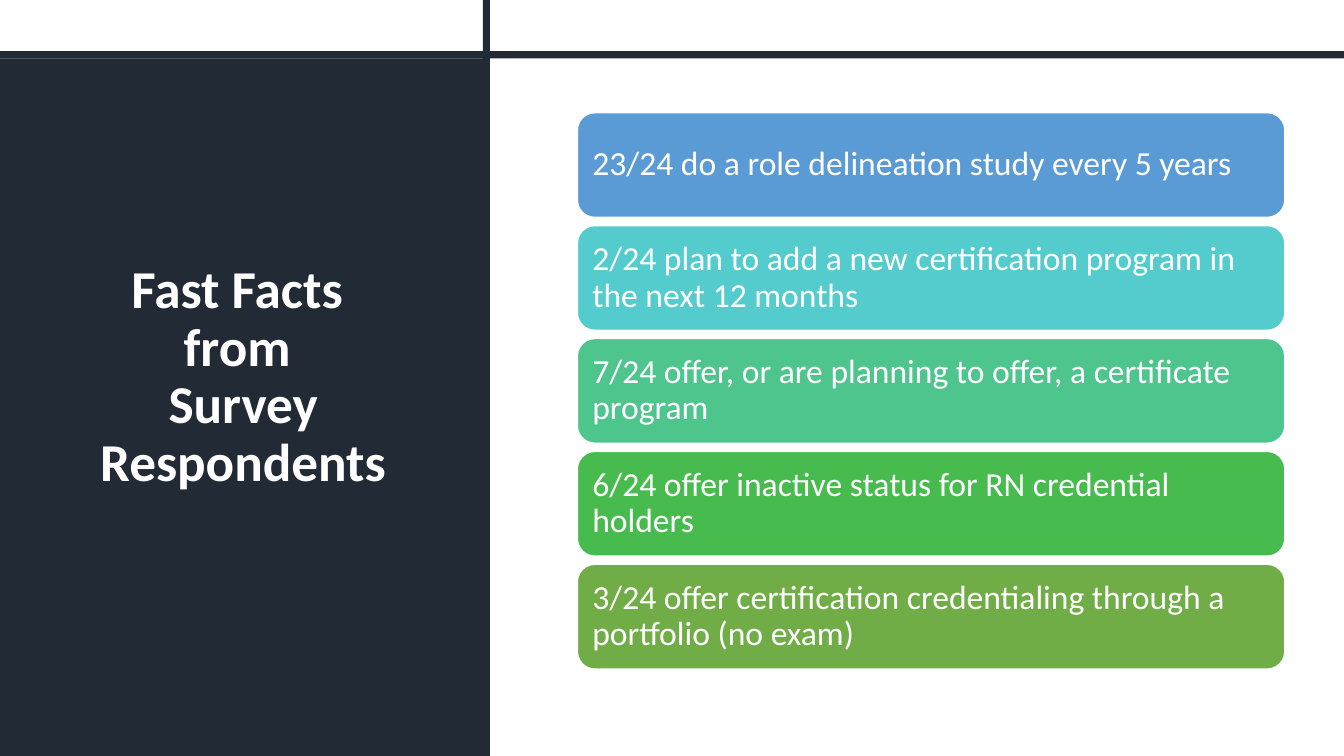
from dataclasses import dataclass
from typing import NamedTuple

from pptx import Presentation
from pptx.dml.color import RGBColor
from pptx.enum.shapes import MSO_SHAPE
from pptx.enum.text import MSO_ANCHOR, PP_ALIGN
from pptx.util import Cm, Pt


@dataclass(frozen=True)
class Theme:
    """Hold the colours and type sizes of the slide."""
    font: str = "Calibri"
    navy: str = "222A35"
    white: str = "FFFFFF"
    facts: tuple = ("5B9BD5", "54CCCD", "4DC58D", "48BB4F", "70AD47")
    title_size: int = 38
    fact_size: int = 24
    outline: int = 1


class Box(NamedTuple):
    """Describe an area in centimetres."""
    left: float
    top: float
    width: float
    height: float

    def lengths(self):
        """Return the four measures as lengths."""
        return [Cm(measure) for measure in self]


THEME = Theme()
SLIDE = Box(0, 0, 33.87, 19.05)
SIDEBAR = Box(0, 1.47, 12.35, 17.58)
FACTS_AREA = Box(14.55, 2.84, 17.83, 14.02)
BAR = 0.18
FACT_HEIGHT = 2.64
TITLE = "Fast Facts \vfrom \vSurvey Respondents"
FACTS = (
    "23/24 do a role delineation study every 5 years",
    "2/24 plan to add a new certification program in the next 12 months",
    "7/24 offer, or are planning to offer, a certificate program",
    "6/24 offer inactive status for RN credential holders",
    "3/24 offer certification credentialing through a portfolio (no exam)",
)


def write(frame, text, *, size, bold=False, align=PP_ALIGN.LEFT, inset=(0.25, 0.25)):
    """Write one vertically centred paragraph into a text frame."""
    frame.word_wrap = True
    frame.vertical_anchor = MSO_ANCHOR.MIDDLE
    frame.margin_left = frame.margin_right = Cm(inset[0])
    frame.margin_top = frame.margin_bottom = Cm(inset[1])
    paragraph = frame.paragraphs[0]
    paragraph.text = text
    paragraph.alignment = align
    paragraph.line_spacing = 0.9
    for run in paragraph.runs:
        run.font.name = THEME.font
        run.font.size = Pt(size)
        run.font.bold = bold
        run.font.color.rgb = RGBColor.from_string(THEME.white)


def add_block(slide, box, fill, kind=MSO_SHAPE.RECTANGLE, outline=None):
    """Add a filled shape, with a border only if an outline colour is given."""
    block = slide.shapes.add_shape(kind, *box.lengths())
    block.shadow.inherit = False
    block.fill.solid()
    block.fill.fore_color.rgb = RGBColor.from_string(fill)
    if outline:
        block.line.color.rgb = RGBColor.from_string(outline)
        block.line.width = Pt(THEME.outline)
    else:
        block.line.fill.background()
    return block


def add_sidebar(slide, box):
    """Add the dark panel and the title on it."""
    add_block(slide, box, THEME.navy)
    title_box = Box(box.left + 0.58, box.top + 0.66, box.width - 1.25, box.height - 2.8)
    title = slide.shapes.add_textbox(*title_box.lengths())
    write(title.text_frame, TITLE, size=THEME.title_size, bold=True,
          align=PP_ALIGN.CENTER, inset=(0.25, 0.13))


def add_crossing_bars(slide, box, corner):
    """Add bars across the box that meet at the top right corner of the panel."""
    right = corner.left + corner.width
    add_block(slide, Box(right - BAR, box.top, BAR, box.height), THEME.navy)
    add_block(slide, Box(box.left, corner.top - BAR, box.width, BAR), THEME.navy)


def add_facts(slide, box):
    """Stack the facts evenly from the top to the bottom of the box."""
    pitch = (box.height - FACT_HEIGHT) / (len(FACTS) - 1)
    for row, (text, colour) in enumerate(zip(FACTS, THEME.facts)):
        fact_box = Box(box.left, box.top + row * pitch, box.width, FACT_HEIGHT)
        fact = add_block(slide, fact_box, colour, MSO_SHAPE.ROUNDED_RECTANGLE, THEME.white)
        write(fact.text_frame, text, size=THEME.fact_size)


def main():
    """Build the slide and save it."""
    deck = Presentation()
    deck.slide_width, deck.slide_height = SLIDE.lengths()[2:]
    slide = deck.slides.add_slide(deck.slide_layouts[6])
    add_sidebar(slide, SIDEBAR)
    add_crossing_bars(slide, SLIDE, SIDEBAR)
    add_facts(slide, FACTS_AREA)
    deck.save("out.pptx")


if __name__ == "__main__":
    main()
